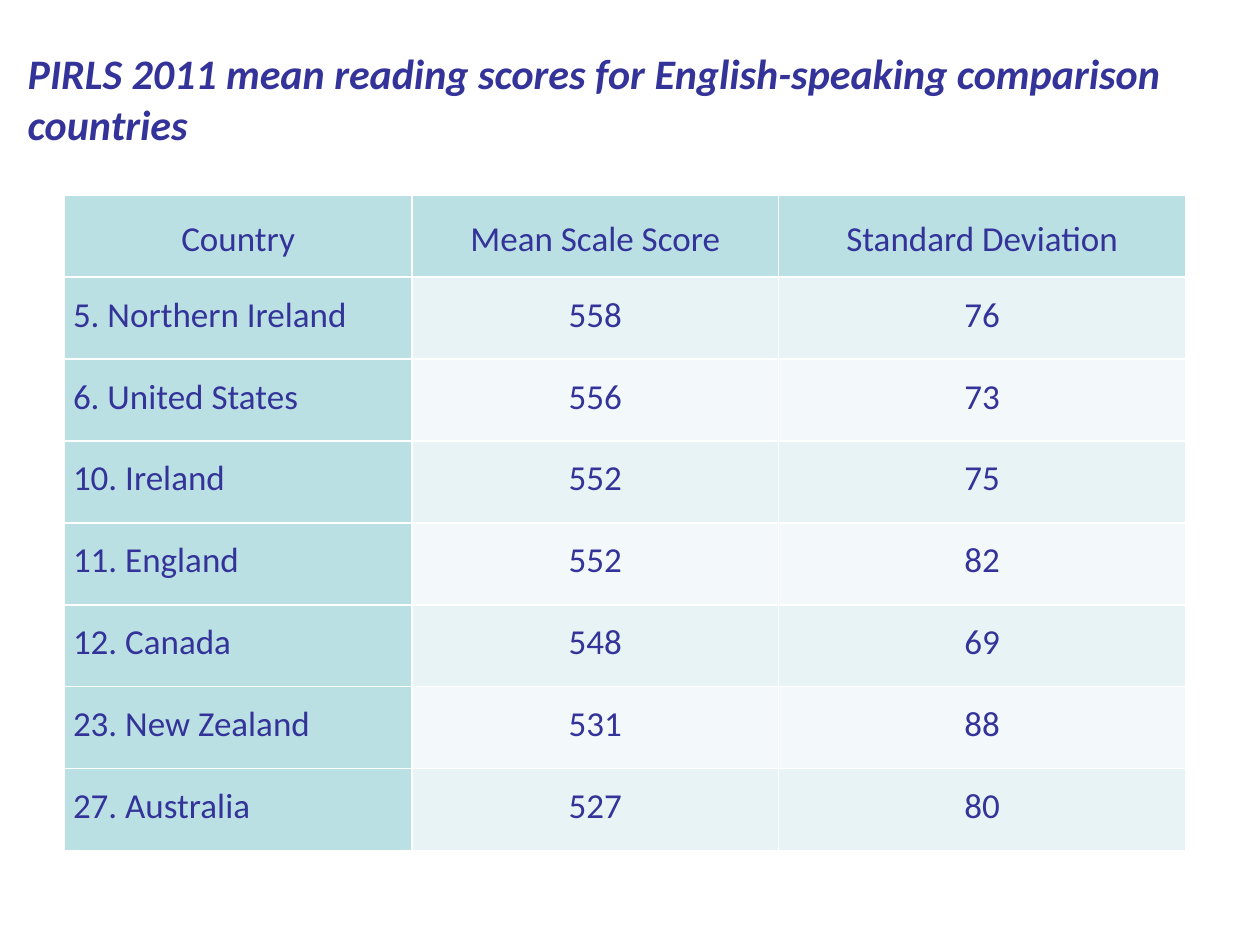
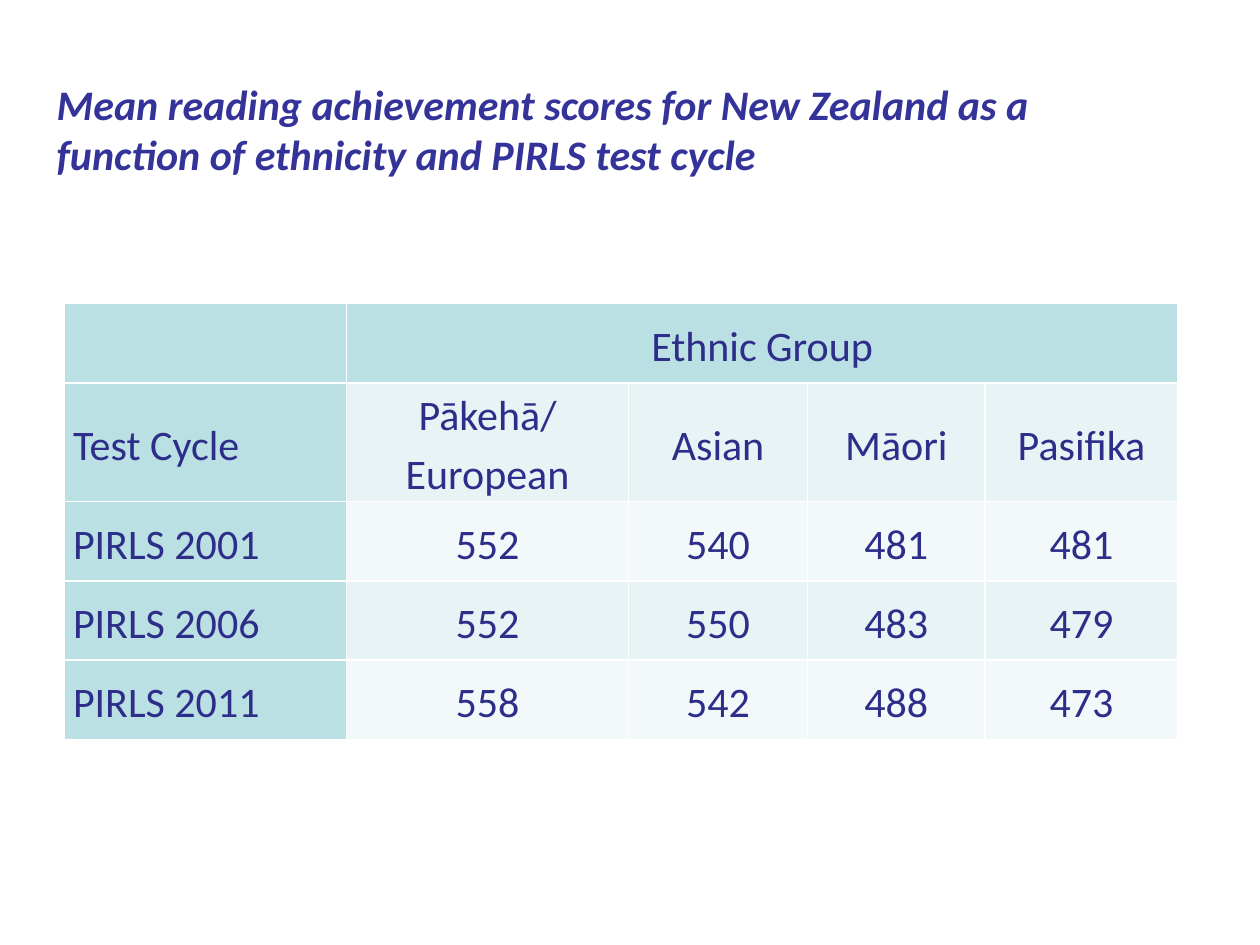
from pptx import Presentation
from pptx.dml.color import RGBColor
from pptx.enum.text import MSO_ANCHOR, MSO_AUTO_SIZE, PP_ALIGN
from pptx.oxml import parse_xml
from pptx.oxml.ns import nsdecls
from pptx.util import Inches, Pt

HUES = {
    "title": "333399",
    "ethnic": "2D2D8A",
    "head": "BBE0E3",
    "odd": "E7F3F4",
    "even": "F3F9FA",
    "rule": "FFFFFF",
}
FONT = "Calibri"

deck = Presentation()
deck.slide_width, deck.slide_height = Inches(10), Inches(7.5)


def add_page(text, left, top, width):
    """Add a slide with its title placed, and return the slide."""
    page = deck.slides.add_slide(deck.slide_layouts.get_by_name("Title Only"))
    title = page.shapes.title
    title.left, title.top = Inches(left), Inches(top)
    title.width, title.height = Inches(width), Inches(1.31)
    frame = title.text_frame
    frame.text = text
    frame.auto_size = MSO_AUTO_SIZE.NONE
    frame.vertical_anchor = MSO_ANCHOR.TOP
    for para in frame.paragraphs:
        para.alignment = PP_ALIGN.LEFT
        font = para.font
        font.name, font.size = FONT, Pt(24)
        font.bold = font.italic = True
        font.color.rgb = RGBColor.from_string(HUES["title"])
    return page


def add_grid(page, rows, top, widths, heights, size, hue, gaps):
    """Add a table; gaps are the line spacings of the head and the body."""
    grid = page.shapes.add_table(
        len(rows), len(widths), Inches(0.51), Inches(top),
        Inches(sum(widths)), Inches(sum(heights))).table
    grid.first_col = True
    for col, width in zip(grid.columns, widths):
        col.width = Inches(width)
    for r, (row, height) in enumerate(zip(rows, heights)):
        grid.rows[r].height = Inches(height)
        for c, text in enumerate(row):
            cell = grid.cell(r, c)
            cell.text = text
            cell.vertical_anchor = MSO_ANCHOR.MIDDLE
            cell.margin_left = cell.margin_right = Inches(0.07)
            cell.margin_top = cell.margin_bottom = 0
            for para in cell.text_frame.paragraphs:
                para.alignment = PP_ALIGN.LEFT if r and not c else PP_ALIGN.CENTER
                para.line_spacing = gaps[min(r, 1)]
                font = para.font
                font.name, font.size, font.bold = FONT, Pt(size), False
                font.color.rgb = RGBColor.from_string(HUES[hue])
            for side in "LRTB":
                cell._tc.get_or_add_tcPr().append(parse_xml(
                    f'<a:ln{side} {nsdecls("a")} w="{Pt(1)}"><a:solidFill>'
                    f'<a:srgbClr val="{HUES["rule"]}"/></a:solidFill></a:ln{side}>'))
            band = "head" if r == 0 or c == 0 else "odd" if r % 2 else "even"
            cell.fill.solid()
            cell.fill.fore_color.rgb = RGBColor.from_string(HUES[band])
    return grid


# Scores by country
scores = [
    ("Country", "Mean Scale Score", "Standard Deviation"),
    ("5. Northern Ireland", "558", "76"),
    ("6. United States", "556", "73"),
    ("10. Ireland", "552", "75"),
    ("11. England", "552", "82"),
    ("12. Canada", "548", "69"),
    ("23. New Zealand", "531", "88"),
    ("27. Australia", "527", "80"),
]
page = add_page("PIRLS 2011 mean reading scores for English-speaking comparison countries",
                0.12, 0.33, 9.37)
add_grid(page, scores, 1.55, [2.76, 2.91, 3.23], [0.65] * len(scores),
         20, "title", (1.15, 0.7))

# Scores by ethnic group and test cycle
groups = [
    ("", "Ethnic Group", "", "", ""),
    ("Test Cycle", "Pākehā/\nEuropean", "Asian", "Māori", "Pasifika"),
    ("PIRLS 2001", "552", "540", "481", "481"),
    ("PIRLS 2006", "552", "550", "483", "479"),
    ("PIRLS 2011", "558", "542", "488", "473"),
]
page = add_page("Mean reading achievement scores for New Zealand as a\n"
                "function of ethnicity and PIRLS test cycle", 0.35, 0.57, 9.29)
grid = add_grid(page, groups, 2.41, [2.24, 2.24, 1.42, 1.41, 1.53],
                [0.63, 0.94, 0.63, 0.63, 0.63], 24, "ethnic", (1.15, 1.15))
grid.cell(0, 1).merge(grid.cell(0, 4))

deck.save("out.pptx")
